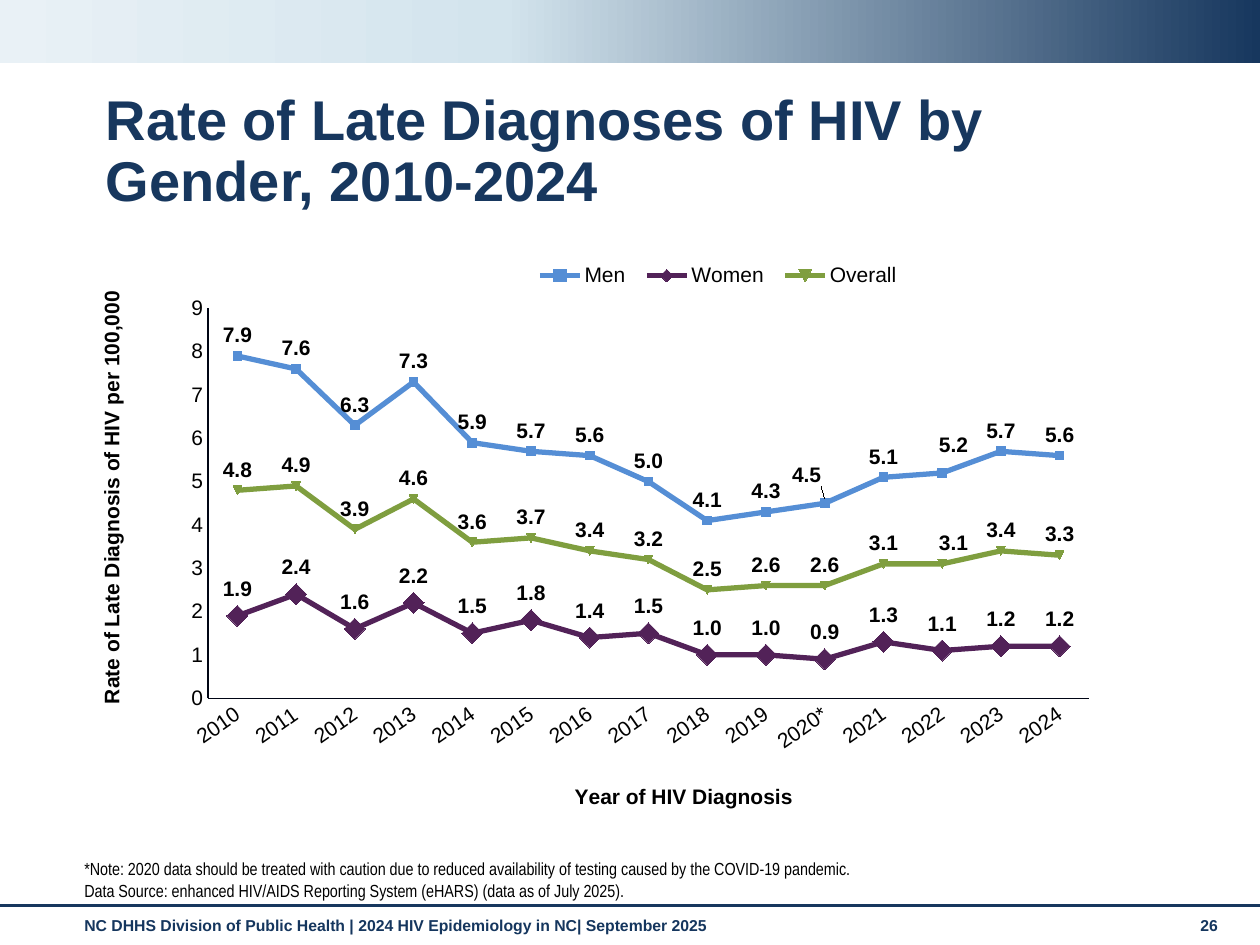
import copy
import dataclasses

import lxml.etree
import pptx
import pptx.chart.data
import pptx.dml.color
import pptx.enum.chart
import pptx.enum.shapes
import pptx.enum.text
import pptx.oxml.ns
import pptx.util

Cm, Pt = pptx.util.Cm, pptx.util.Pt
qn = pptx.oxml.ns.qn
MARKER = pptx.enum.chart.XL_MARKER_STYLE
ANCHOR = pptx.enum.text.MSO_ANCHOR


@dataclasses.dataclass(frozen=True)
class Theme:
    navy: str = "17375E"
    footer: str = "15365E"
    black: str = "000000"
    axis: str = "000514"
    bar: tuple = ((0, "17375E"), (0.6, "D3E4ED"), (1, "E9F1F6"))
    sans: str = "Arial"
    narrow: str = "Arial Narrow"
    title_size: int = 32
    chart_size: int = 12
    note_size: int = 10
    footer_size: int = 9


THEME = Theme()
YEARS = [f"{y}*" if y == 2020 else str(y) for y in range(2010, 2025)]
SERIES = [
    ("Men", "558ED5", MARKER.SQUARE, 5, "0.0",
     (7.9, 7.6, 6.3, 7.3, 5.9, 5.7, 5.6, 5, 4.1, 4.3, 4.5, 5.1, 5.2, 5.7, 5.6),
     {10: (-0.016, -0.013), 12: (0.01, -0.012)}),
    ("Women", "522258", MARKER.DIAMOND, 12, "0.0",
     (1.9, 2.4, 1.6, 2.2, 1.5, 1.8, 1.4, 1.5, 1, 1, 0.9, 1.3, 1.1, 1.2, 1.2), {}),
    ("Overall", "7F9E3F", MARKER.AUTOMATIC, 5, "#,##0.0",
     (4.8, 4.9, 3.9, 4.6, 3.6, 3.7, 3.4, 3.2, 2.5, 2.6, 2.6, 3.1, 3.1, 3.4, 3.3),
     {12: (0.01, 0)}),
]


def rgb(value):
    """Return a colour object for a hex string."""
    return pptx.dml.color.RGBColor.from_string(value)


def apply(obj, **values):
    """Set every given attribute on an object."""
    for name, value in values.items():
        setattr(obj, name, value)


def set_font(font, size, color, name=THEME.sans, bold=False):
    """Format a font."""
    apply(font, size=Pt(size), name=name, bold=bold)
    font.color.rgb = rgb(color)


def set_line(line, color, width):
    """Format a line."""
    line.color.rgb = rgb(color)
    line.width = Pt(width)


def fill_text(tf, lines, size, color, name=THEME.sans, bold=False, anchor=ANCHOR.TOP):
    """Write one paragraph per line into a text frame."""
    apply(tf, word_wrap=True, vertical_anchor=anchor,
          auto_size=pptx.enum.text.MSO_AUTO_SIZE.NONE)
    for i, line in enumerate(lines):
        p = tf.paragraphs[0] if i == 0 else tf.add_paragraph()
        p.alignment = pptx.enum.text.PP_ALIGN.LEFT
        r = p.add_run()
        r.text = line
        set_font(r.font, size, color, name, bold)


def add_text(s, box, lines, *args, **kwargs):
    """Add a text box."""
    tb = s.shapes.add_textbox(*map(Cm, box))
    fill_text(tb.text_frame, lines, *args, **kwargs)


def set_title(s, text):
    """Place and format the title placeholder."""
    sp = s.shapes.title
    apply(sp, left=Cm(1.88), top=Cm(1.73), width=Cm(21.79), height=Cm(1.52))
    fill_text(sp.text_frame, [text], THEME.title_size, THEME.navy, bold=True)
    sp.text_frame.paragraphs[0].line_spacing = 0.9


def add_header_bar(s):
    """Add the gradient bar along the top edge."""
    sp = s.shapes.add_shape(pptx.enum.shapes.MSO_SHAPE.RECTANGLE, 0, 0, Cm(25.4), Cm(1.27))
    sp.shadow.inherit = False
    sp.line.fill.background()
    sp.fill.gradient()
    sp.fill.gradient_angle = 180
    stops = sp._element.spPr.find(".//" + qn("a:gsLst"))
    stops.append(copy.deepcopy(stops[-1]))
    for stop, (position, color) in zip(sp.fill.gradient_stops, THEME.bar):
        stop.position = position
        stop.color.rgb = rgb(color)


def add_rule(s, y):
    """Add a full-width horizontal line."""
    kind = pptx.enum.shapes.MSO_CONNECTOR.STRAIGHT
    cx = s.shapes.add_connector(kind, 0, Cm(y), Cm(25.4), Cm(y))
    set_line(cx.line, THEME.navy, 1.75)
    lxml.etree.SubElement(cx._element.spPr, qn("a:effectLst"))


def set_layout(el, index, **values):
    """Give a chart element a manual layout."""
    for old in el.findall(qn("c:layout")):
        el.remove(old)
    layout = lxml.etree.Element(qn("c:layout"))
    manual = lxml.etree.SubElement(layout, qn("c:manualLayout"))
    for name, value in values.items():
        lxml.etree.SubElement(manual, qn(f"c:{name}")).set("val", str(value))
    el.insert(index, layout)


def format_axis(axis, title, x, y, width, rotation):
    """Format an axis, its labels and its title."""
    apply(axis, has_major_gridlines=False,
          major_tick_mark=pptx.enum.chart.XL_TICK_MARK.NONE,
          minor_tick_mark=pptx.enum.chart.XL_TICK_MARK.NONE)
    set_line(axis.format.line, THEME.axis, width)
    set_font(axis.tick_labels.font, THEME.chart_size, THEME.black)
    tf = axis.axis_title.text_frame
    tf.text = title
    set_font(tf.paragraphs[0].runs[0].font, THEME.chart_size, THEME.black, bold=True)
    body = tf._txBody.find(qn("a:bodyPr"))
    body.set("rot", str(rotation * 60000))
    body.set("vert", "horz")
    set_layout(axis.axis_title._element, 1, xMode="edge", yMode="edge", x=x, y=y)


def format_series(series, color, style, size, fmt, moves):
    """Format a series, its markers and its labels."""
    series.smooth = False
    set_line(series.format.line, color, 3)
    apply(series.marker, style=style, size=size)
    fill = series.marker.format.fill
    fill.solid()
    fill.fore_color.rgb = rgb(color)
    series.marker.format.line.fill.background()
    above = pptx.enum.chart.XL_LABEL_POSITION.ABOVE
    labels = series.data_labels
    apply(labels, show_value=True, number_format=fmt,
          number_format_is_linked=False, position=above)
    set_font(labels.font, THEME.chart_size, THEME.black, bold=True)
    for index, (x, y) in moves.items():
        label = series.points[index].data_label
        set_font(label.font, THEME.chart_size, THEME.black, bold=True)
        label.position = above
        el = label._get_or_add_dLbl()
        set_layout(el, 1, x=x, y=y)
        number = lxml.etree.Element(qn("c:numFmt"), formatCode=fmt, sourceLinked="0")
        el.insert(2, number)


def add_rate_chart(s):
    """Add the line chart of late diagnosis rates."""
    data = pptx.chart.data.CategoryChartData()
    data.categories = YEARS
    for name, *_, values, _moves in SERIES:
        data.add_series(name, values)
    box = map(Cm, (1.45, 4.98, 22.86, 11.56))
    kind = pptx.enum.chart.XL_CHART_TYPE.LINE_MARKERS
    chart = s.shapes.add_chart(kind, *box, data).chart
    apply(chart, has_title=False, has_legend=True)
    set_font(chart.font, THEME.chart_size, THEME.black)
    chart.plots[0].vary_by_categories = False
    apply(chart.legend, position=pptx.enum.chart.XL_LEGEND_POSITION.TOP,
          include_in_layout=False)
    set_font(chart.legend.font, THEME.chart_size, THEME.black)
    set_layout(chart.legend._element, 1, xMode="edge", yMode="edge",
               x=0.4, y=0.02, w=0.34, h=0.06)
    set_layout(chart._chartSpace.chart.plotArea, 0, layoutTarget="inner", xMode="edge",
               yMode="edge", x=0.12, y=0.107, w=0.777, h=0.68)
    format_axis(chart.category_axis, "Year of HIV Diagnosis", 0.44, 0.93, 0.27, 0)
    format_axis(chart.value_axis, "Rate of Late Diagnosis of HIV per 100,000",
                0.02, 0.07, 0.75, -90)
    labels = chart.category_axis._element.find(qn("c:txPr"))
    labels.find(qn("a:bodyPr")).set("rot", str(-35 * 60000))
    apply(chart.value_axis, minimum_scale=0, maximum_scale=9, major_unit=1)
    apply(chart.value_axis.tick_labels, number_format="#,##0", number_format_is_linked=False)
    for series, (_, color, style, size, fmt, _values, moves) in zip(chart.plots[0].series, SERIES):
        format_series(series, color, style, size, fmt, moves)


def main():
    """Build and save the slide."""
    prs = pptx.Presentation()
    apply(prs, slide_width=Cm(25.4), slide_height=Cm(19.05))
    s = prs.slides.add_slide(prs.slide_layouts[5])
    footer = (THEME.footer_size, THEME.footer)
    add_text(s, (1.45, 18.34, 22.2, 0.74),
             ["NC DHHS Division of Public Health | 2024 HIV Epidemiology in NC| September 2025"],
             *footer, bold=True)
    add_text(s, (23.95, 18.34, 1.12, 0.76), ["26"], *footer, bold=True)
    add_header_bar(s)
    add_rule(s, 18.26)
    set_title(s, "Rate of Late Diagnoses of HIV by Gender, 2010-2024")
    add_rate_chart(s)
    add_text(s, (1.45, 17.37, 22.2, 0.91), [
        "*Note: 2020 data should be treated with caution due to reduced availability of "
        "testing caused by the COVID-19 pandemic.",
        "Data Source: enhanced HIV/AIDS Reporting System (eHARS) (data as of July 2025).",
    ], THEME.note_size, THEME.black, name=THEME.narrow, anchor=ANCHOR.BOTTOM)
    prs.save("out.pptx")


if __name__ == "__main__":
    main()
